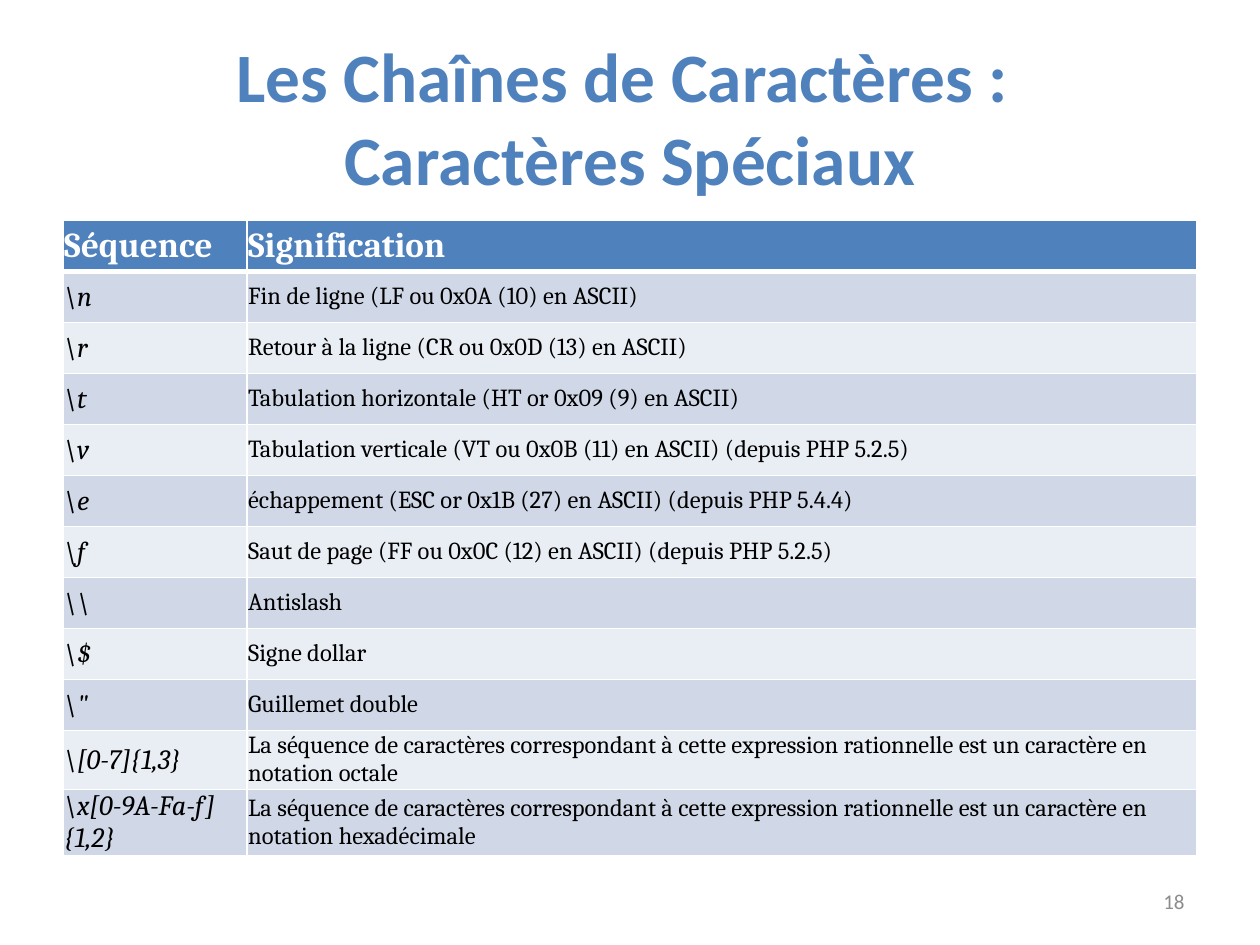
from dataclasses import dataclass

from lxml import etree
from pptx import Presentation
from pptx.dml.color import RGBColor
from pptx.enum import text
from pptx.oxml import ns
from pptx.util import Inches, Pt


@dataclass(frozen=True)
class Theme:
    accent: str = "4F81BD"
    white: str = "FFFFFF"
    black: str = "000000"
    muted: str = "8C8C8C"
    bands: tuple[str, str] = ("D0D8E8", "E9EDF4")
    sans: str = "Calibri"
    serif: str = "Cambria"
    title_size: float = 39.6
    header_size: float = 20
    sequence_size: float = 16
    meaning_size: float = 14
    number_size: float = 12
    thin_border: float = 1
    thick_border: float = 3


@dataclass(frozen=True)
class Style:
    font: str
    size: float
    color: str
    bold: bool = False
    italic: bool = False


@dataclass(frozen=True)
class Escape:
    sequence: str
    meaning: str


THEME = Theme()
TITLE = Style(THEME.sans, THEME.title_size, THEME.accent, bold=True)
HEADER = Style(THEME.serif, THEME.header_size, THEME.white, bold=True)
SEQUENCE = Style(THEME.serif, THEME.sequence_size, THEME.black, italic=True)
MEANING = Style(THEME.serif, THEME.meaning_size, THEME.black)
NUMBER = Style(THEME.sans, THEME.number_size, THEME.muted)

RATIONAL = "La séquence de caractères correspondant à cette expression rationnelle est un caractère en notation "
HEADING = Escape("Séquence", "Signification")
ESCAPES = (
    Escape(r"\n", "Fin de ligne (LF ou 0x0A (10) en ASCII)"),
    Escape(r"\r", "Retour à la ligne (CR ou 0x0D (13) en ASCII)"),
    Escape(r"\t", "Tabulation horizontale (HT or 0x09 (9) en ASCII)"),
    Escape(r"\v", "Tabulation verticale (VT ou 0x0B (11) en ASCII) (depuis PHP 5.2.5)"),
    Escape(r"\e", "échappement (ESC or 0x1B (27) en ASCII) (depuis PHP 5.4.4)"),
    Escape(r"\f", "Saut de page (FF ou 0x0C (12) en ASCII) (depuis PHP 5.2.5)"),
    Escape(r"\\", "Antislash"),
    Escape(r"\$", "Signe dollar"),
    Escape(r'\"', "Guillemet double"),
    Escape(r"\[0-7]{1,3}", RATIONAL + "octale"),
    Escape(r"\x[0-9A-Fa-f]{1,2}", RATIONAL + "hexadécimale"),
)


def apply_format(target: object, values: dict[str, object]) -> None:
    for name, value in values.items():
        setattr(target, name, value)


def write(frame: object, content: str, style: Style, alignment: object) -> None:
    frame.text = content
    for paragraph in frame.paragraphs:
        paragraph.alignment = alignment
        for run in paragraph.runs:
            apply_format(run.font, {
                "name": style.font, "size": Pt(style.size),
                "bold": style.bold, "italic": style.italic,
            })
            run.font.color.rgb = RGBColor.from_string(style.color)


def place(shape: object, left: float, top: float, width: float, height: float) -> None:
    apply_format(shape, {
        "left": Inches(left), "top": Inches(top),
        "width": Inches(width), "height": Inches(height),
    })


def draw_borders(cell: object, widths: dict[str, float]) -> None:
    properties = cell._tc.get_or_add_tcPr()
    for index, (side, width) in enumerate(widths.items()):
        line = etree.Element(ns.qn(f"a:ln{side}"), w=str(Pt(width)))
        fill = etree.SubElement(line, ns.qn("a:solidFill"))
        etree.SubElement(fill, ns.qn("a:srgbClr"), val=THEME.white)
        properties.insert(index, line)


def draw_cell(cell: object, content: str, style: Style, fill: str, row: int) -> None:
    margin = Inches(0.01)
    apply_format(cell, {
        "margin_left": margin, "margin_right": margin,
        "margin_top": margin, "margin_bottom": margin,
        "vertical_anchor": text.MSO_ANCHOR.MIDDLE,
    })
    write(cell.text_frame, content, style, text.PP_ALIGN.LEFT)
    cell.fill.solid()
    cell.fill.fore_color.rgb = RGBColor.from_string(fill)
    thin, thick = THEME.thin_border, THEME.thick_border
    draw_borders(cell, {
        "L": thin, "R": thin,
        "T": thick if row == 1 else thin,
        "B": thick if row == 0 else thin,
    })


def draw_title(slide: object) -> None:
    title = slide.shapes.title
    place(title, 0.5, 0.3, 9, 1.25)
    apply_format(title.text_frame, {
        "vertical_anchor": text.MSO_ANCHOR.MIDDLE,
        "auto_size": text.MSO_AUTO_SIZE.NONE, "word_wrap": True,
    })
    write(title.text_frame, "Les Chaînes de Caractères : \vCaractères Spéciaux",
          TITLE, text.PP_ALIGN.CENTER)


def draw_escapes(slide: object) -> None:
    rows = (HEADING, *ESCAPES)
    table = slide.shapes.add_table(
        len(rows), 2, Inches(0.5), Inches(1.75), Inches(9), Inches(4.86)).table
    for column, width in zip(table.columns, (1.46, 7.54)):
        column.width = Inches(width)
    for row, escape in enumerate(rows):
        fill = THEME.bands[(row - 1) % 2] if row else THEME.accent
        styles = (SEQUENCE, MEANING) if row else (HEADER, HEADER)
        contents = (escape.sequence, escape.meaning)
        for column, (content, style) in enumerate(zip(contents, styles)):
            draw_cell(table.cell(row, column), content, style, fill, row)


def draw_number(slide: object) -> None:
    box = slide.shapes.add_textbox(Inches(7.17), Inches(6.95), Inches(2.33), Inches(0.4))
    apply_format(box.text_frame, {
        "word_wrap": True, "vertical_anchor": text.MSO_ANCHOR.MIDDLE,
    })
    write(box.text_frame, "18", NUMBER, text.PP_ALIGN.RIGHT)


def main() -> None:
    presentation = Presentation()
    apply_format(presentation, {"slide_width": Inches(10), "slide_height": Inches(7.5)})
    slide = presentation.slides.add_slide(presentation.slide_layouts.get_by_name("Title Only"))
    draw_title(slide)
    draw_escapes(slide)
    draw_number(slide)
    presentation.save("out.pptx")


if __name__ == "__main__":
    main()
